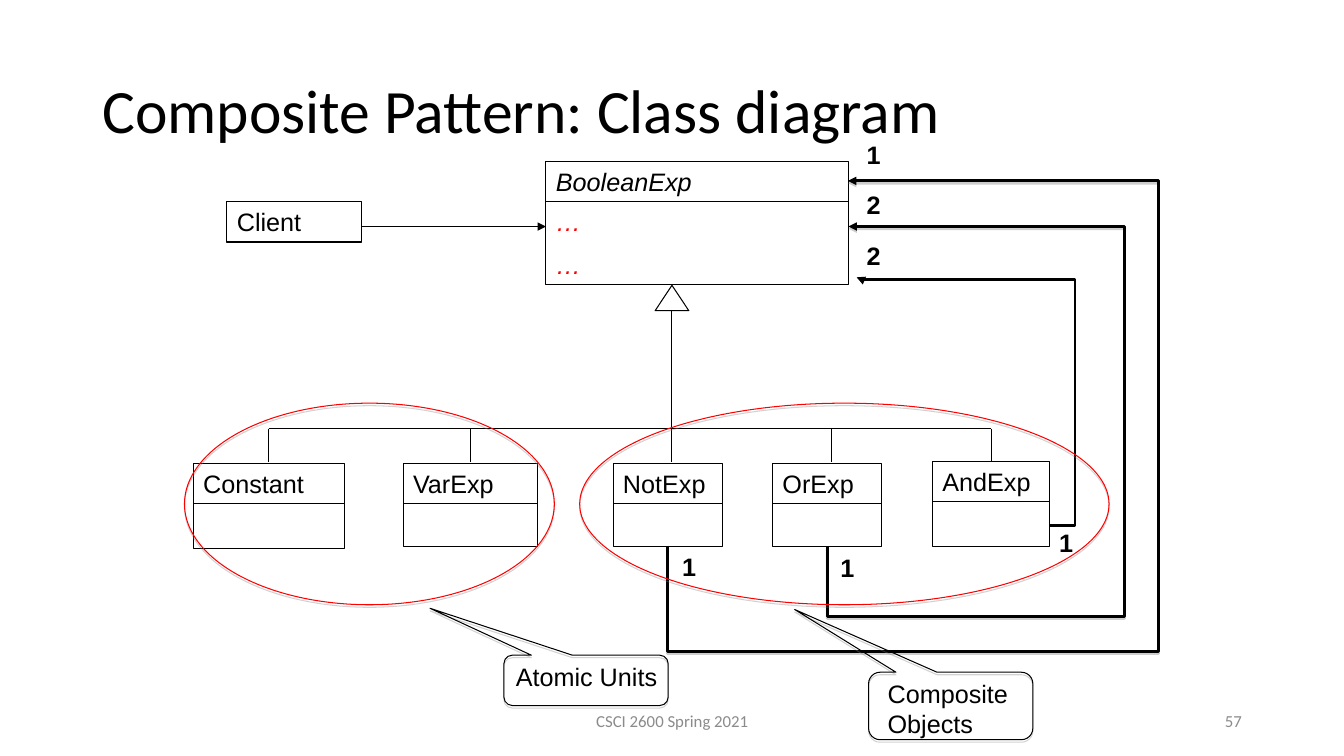
from lxml import etree
from pptx import Presentation
from pptx.dml.color import RGBColor
from pptx.enum.shapes import MSO_CONNECTOR, MSO_SHAPE
from pptx.enum.text import MSO_ANCHOR, PP_ALIGN
from pptx.oxml.ns import qn
from pptx.util import Cm, Pt

COLORS = {
    "ink": "000000",
    "accent": "FF0000",
    "paper": "FFFFFF",
    "footer": "8B8B8B",
    "shadow": "808080",
}
HEADER_HEIGHT = 1.02
STEM_X = 16.93
BUS_Y = 10.8


def color(name):
    return RGBColor.from_string(COLORS[name])


def write(holder, text, font="Arial", size=18, ink="ink", bold=False, italic=False,
          align=PP_ALIGN.LEFT, anchor=MSO_ANCHOR.TOP, before=0, spacing=None, wrap=True):
    frame = holder.text_frame
    frame.text = text
    frame.word_wrap = wrap
    frame.vertical_anchor = anchor
    for paragraph in frame.paragraphs:
        paragraph.alignment = align
        paragraph.space_before = Pt(before)
        paragraph.line_spacing = spacing
        paragraph.font.name = font
        paragraph.font.size = Pt(size)
        paragraph.font.bold = bold
        paragraph.font.italic = italic
        paragraph.font.color.rgb = color(ink)


def add_label(slide, text, left, top, width, height, **style):
    label = slide.shapes.add_textbox(Cm(left), Cm(top), Cm(width), Cm(height))
    write(label, text, **style)


def set_effects(element, distance=None, opacity=35):
    properties = element.spPr
    for old in properties.findall(qn("a:effectLst")):
        properties.remove(old)
    effects = etree.SubElement(properties, qn("a:effectLst"))
    if distance:
        shadow = etree.SubElement(effects, qn("a:outerShdw"), blurRad="0",
                                  dist=str(Pt(distance)), dir="5400000",
                                  algn="ctr", rotWithShape="0")
        tint = etree.SubElement(shadow, qn("a:srgbClr"), val=COLORS["shadow"])
        etree.SubElement(tint, qn("a:alpha"), val=str(opacity * 1000))


def add_outline(slide, kind, left, top, width, height, line="ink", fill=None, shadow=None):
    outline = slide.shapes.add_shape(kind, Cm(left), Cm(top), Cm(width), Cm(height))
    outline.shadow.inherit = False
    if fill:
        outline.fill.solid()
        outline.fill.fore_color.rgb = color(fill)
    else:
        outline.fill.background()
    outline.line.color.rgb = color(line)
    outline.line.width = Pt(0.75)
    if shadow:
        set_effects(outline._element, shadow)
    return outline


def add_name_box(slide, name, left, top, width, italic=False):
    header = add_outline(slide, MSO_SHAPE.RECTANGLE, left, top, width, HEADER_HEIGHT)
    write(header, name, italic=italic, before=9)


def add_class(slide, name, left, top, width, body_height, italic=False):
    add_name_box(slide, name, left, top, width, italic)
    return add_outline(slide, MSO_SHAPE.RECTANGLE, left, top + HEADER_HEIGHT,
                       width, body_height)


def add_line(slide, x1, y1, x2, y2, kind=MSO_CONNECTOR.STRAIGHT, width=0.75,
             arrow=False, shadow=None):
    line = slide.shapes.add_connector(kind, Cm(x1), Cm(y1), Cm(x2), Cm(y2))
    line.line.color.rgb = color("ink")
    line.line.width = Pt(width)
    if arrow:
        etree.SubElement(line.line._get_or_add_ln(), qn("a:tailEnd"), type="triangle")
    set_effects(line._element, shadow, opacity=38)
    return line


def add_route(slide, left, top, width, height, bends, rotation=0, shadow=None):
    route = add_line(slide, left + width, top + height, left, top,
                     MSO_CONNECTOR.ELBOW, 2, True, shadow)
    properties = route._element.spPr
    properties.find(qn("a:xfrm")).set("rot", str(rotation * 60000))
    geometry = properties.find(qn("a:prstGeom"))
    geometry.set("prst", f"bentConnector{len(bends) + 2}")
    guides = geometry.find(qn("a:avLst"))
    for number, bend in enumerate(bends, 1):
        etree.SubElement(guides, qn("a:gd"), name=f"adj{number}",
                         fmla=f"val {round(bend * 100000)}")


def add_callout(slide, left, top, width, height):
    callout = add_outline(slide, MSO_SHAPE.ROUNDED_RECTANGULAR_CALLOUT,
                          left, top, width, height, shadow=1.8)
    for index, value in enumerate((-0.95, -1.43, 0.17)):
        callout.adjustments[index] = value


def add_inheritance(slide):
    drops = (6.77, 11.85, STEM_X, 20.96, 24.98)
    add_line(slide, drops[0], BUS_Y, drops[-1], BUS_Y)
    for x in drops:
        add_line(slide, x, BUS_Y, x, 11.64)
    add_line(slide, STEM_X, 7.83, STEM_X, BUS_Y)
    add_outline(slide, MSO_SHAPE.ISOSCELES_TRIANGLE, 16.51, 7.19, 0.85, 0.64, fill="paper")


def main():
    deck = Presentation()
    deck.slide_width, deck.slide_height = Cm(33.87), Cm(19.05)
    slide = deck.slides.add_slide(deck.slide_layouts[5])

    title = slide.shapes.title
    title.left, title.top, title.width, title.height = Cm(2.33), Cm(1.02), Cm(29.21), Cm(3.68)
    write(title, "Composite Pattern: Class diagram", font="Calibri", size=44,
          anchor=MSO_ANCHOR.MIDDLE, spacing=0.9)

    operations = add_class(slide, "BooleanExp", 13.76, 4.06, 7.62, 2.08, italic=True)
    write(operations, "…\n…", ink="accent", italic=True, before=9)
    for name, left, top, width, body_height in (
        ("Constant", 4.87, 11.68, 3.81, 1.12),
        ("VarExp", 10.16, 11.68, 3.39, 1.07),
        ("NotExp", 15.45, 11.68, 2.75, 1.07),
        ("OrExp", 19.47, 11.68, 2.75, 1.07),
        ("AndExp", 23.5, 11.63, 2.96, 1.12),
    ):
        add_class(slide, name, left, top, width, body_height)
    add_name_box(slide, "Client", 5.72, 5.08, 3.39)
    add_line(slide, 9.1, 5.71, 13.76, 5.71, arrow=True)
    add_inheritance(slide)

    add_route(slide, 21.59, 6.99, 4.87, 6.25, (-0.13, 0.99))
    add_route(slide, 17.09, 9.47, 8.05, 0.53, (-0.22, 14.13, 1), rotation=90, shadow=1.6)
    add_route(slide, 14.5, 6.88, 9.19, 4.55, (-0.29, 2.72), rotation=90, shadow=1.6)
    for count, left, top in (
        ("1", 21.59, 3.38), ("2", 21.59, 4.65), ("2", 21.59, 5.92),
        ("1", 26.44, 13.16), ("1", 20.93, 13.79), ("1", 16.94, 13.77),
    ):
        add_label(slide, count, left, top, 0.86, 1.02, bold=True, wrap=False)

    for left, width in ((14.61, 13.34), (4.65, 9.32)):
        add_outline(slide, MSO_SHAPE.OVAL, left, 10.16, width, 5.08, line="accent", shadow=1.8)
    add_callout(slide, 21.89, 16.94, 4.14, 1.7)
    add_label(slide, "Composite \vObjects", 22.12, 16.97, 4.4, 1.78)
    add_callout(slide, 12.7, 16.51, 4.14, 1.27)
    add_label(slide, "Atomic Units", 12.75, 16.54, 4.6, 1.02)

    footer = dict(font="Calibri", size=12, ink="footer", anchor=MSO_ANCHOR.MIDDLE)
    add_label(slide, "CSCI 2600 Spring 2021", 11.23, 17.65, 11.43, 1.02,
              align=PP_ALIGN.CENTER, **footer)
    add_label(slide, "57", 23.93, 17.65, 7.62, 1.02, align=PP_ALIGN.RIGHT, **footer)
    deck.save("out.pptx")


if __name__ == "__main__":
    main()
